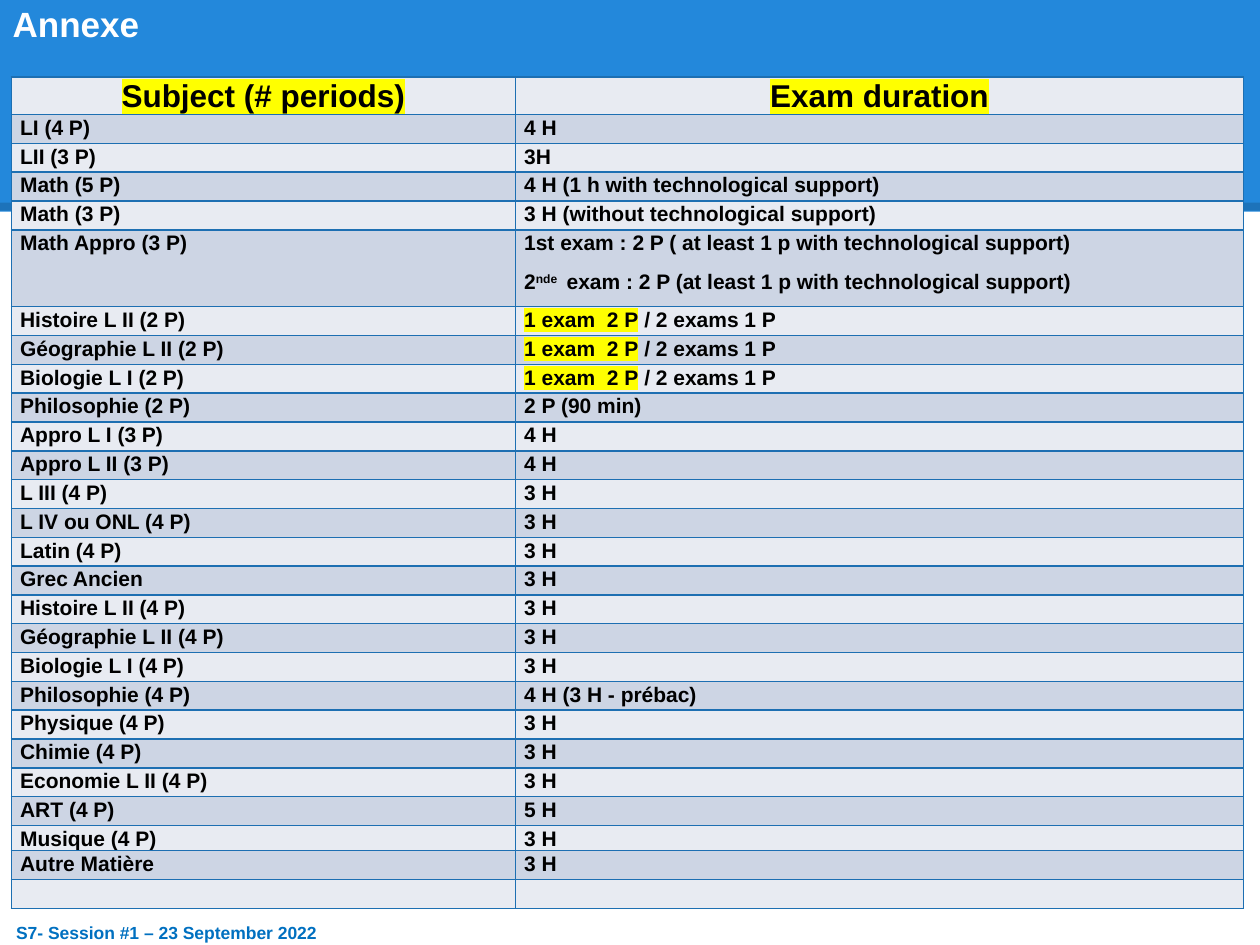
from lxml.etree import SubElement
from pptx import Presentation
from pptx.dml.color import RGBColor
from pptx.enum.shapes import MSO_CONNECTOR, MSO_SHAPE
from pptx.enum.text import MSO_ANCHOR, MSO_AUTO_SIZE, PP_ALIGN
from pptx.oxml.ns import qn
from pptx.util import Inches, Pt

COLORS = {
    "band": "2388DB", "shade": "000000", "title": "FFFFFF", "text": "000000",
    "border": "1D6FB2", "light": "E8EBF2", "dark": "CDD5E4",
    "marker": "FFFF00", "footer": "0070C0",
}

# A cell is a list of paragraphs, a paragraph a list of (text, style) runs.
MARK = {"marked": True}
APPRO_EXAMS = [
    [("1st exam : 2 P ( at least 1 p with technological support)", {})],
    [("2", {}), ("nde ", {"raised": True}),
     (" exam : 2 P (at least 1 p with technological support)", {})],
]
EXAM_CHOICE = [[("1 exam  2 P", MARK), (" / 2 exams 1 P", {})]]

EXAMS = [
    ("LI (4 P)", "4 H"),
    ("LII (3 P)", "3H"),
    ("Math (5 P)", "4 H (1 h with technological support)"),
    ("Math (3 P)", "3 H (without technological support)"),
    ("Math Appro (3 P)", APPRO_EXAMS),
    ("Histoire L II (2 P)", EXAM_CHOICE),
    ("Géographie L II (2 P)", EXAM_CHOICE),
    ("Biologie L I (2 P)", EXAM_CHOICE),
    ("Philosophie (2 P)", "2 P (90 min)"),
    ("Appro L I (3 P)", "4 H"),
    ("Appro L II (3 P)", "4 H"),
    ("L III (4 P)", "3 H"),
    ("L IV ou ONL (4 P)", "3 H"),
    ("Latin (4 P)", "3 H"),
    ("Grec Ancien", "3 H"),
    ("Histoire L II (4 P)", "3 H"),
    ("Géographie L II (4 P)", "3 H"),
    ("Biologie L I (4 P)", "3 H"),
    ("Philosophie (4 P)", "4 H (3 H - prébac)"),
    ("Physique (4 P)", "3 H"),
    ("Chimie (4 P)", "3 H"),
    ("Economie L II (4 P)", "3 H"),
    ("ART (4 P)", "5 H"),
    ("Musique (4 P)", "3 H"),
    ("Autre Matière", "3 H"),
    ("", ""),
]
HEADINGS = ("Subject (# periods)", "Exam duration")

# Header, two-exam row and the tight row have their own heights; the rest share.
TALL_ROW, TIGHT_ROW = 0.61, 0.2
PLAIN_ROW = (6.59 - 0.29 - TALL_ROW - TIGHT_ROW) / 24
SPECIAL_ROWS = {"Math Appro (3 P)": TALL_ROW, "Musique (4 P)": TIGHT_ROW}


class SlideBuilder:
    def __init__(self, slide, font="Arial"):
        self.slide = slide
        self.font = font

    def color(self, key):
        return RGBColor.from_string(COLORS[key])

    def run(self, paragraph, text, size, color, marked=False, raised=False):
        run = paragraph.add_run()
        run.text = text
        run.font.size = Pt(size)
        run.font.bold = True
        run.font.color.rgb = self.color(color)
        run.font.name = self.font
        properties = run._r.get_or_add_rPr()
        if raised:
            properties.set("baseline", "30000")
        if marked:
            highlight = SubElement(properties, qn("a:highlight"))
            SubElement(highlight, qn("a:srgbClr"), val=COLORS["marker"])
            properties.find(qn("a:solidFill")).addnext(highlight)

    def place(self, shape, left, top, width, height):
        shape.left, shape.top = Inches(left), Inches(top)
        shape.width, shape.height = Inches(width), Inches(height)

    def band(self, left, top, width, height):
        band = self.slide.shapes.add_shape(
            MSO_SHAPE.RECTANGLE, *map(Inches, (left, top, width, height)))
        band.shadow.inherit = False
        band.fill.solid()
        band.fill.fore_color.rgb = self.color("band")
        band.line.fill.background()

    def shade_line(self, y, width, weight, opacity):
        line = self.slide.shapes.add_connector(
            MSO_CONNECTOR.STRAIGHT, 0, Inches(y), Inches(width), Inches(y))
        line.line.width = Pt(weight)
        line.line.color.rgb = self.color("shade")
        properties = line.element.spPr
        tint = next(properties.iter(qn("a:srgbClr")))
        SubElement(tint, qn("a:alpha"), val=str(opacity * 1000))
        SubElement(properties, qn("a:effectLst"))

    def title(self, text, *box):
        title = self.slide.shapes.title
        title.element.getparent().append(title.element)  # in front of the band
        self.place(title, *box)
        frame = title.text_frame
        frame.auto_size = MSO_AUTO_SIZE.NONE
        frame.vertical_anchor = MSO_ANCHOR.BOTTOM
        frame.margin_left = frame.margin_right = Inches(0.1)
        frame.margin_top = frame.margin_bottom = Inches(0.1)
        frame.paragraphs[0].alignment = PP_ALIGN.LEFT
        self.run(frame.paragraphs[0], text, 20, "title")

    def footer(self, text, *box):
        footer = self.slide.shapes.add_textbox(*map(Inches, box))
        frame = footer.text_frame
        frame.word_wrap = True
        frame.auto_size = MSO_AUTO_SIZE.SHAPE_TO_FIT_TEXT
        self.run(frame.paragraphs[0], text, 10, "footer")

    def cell(self, cell, content, fill, size=12, align=PP_ALIGN.LEFT):
        cell.fill.solid()
        cell.fill.fore_color.rgb = self.color(fill)
        cell.margin_left = cell.margin_right = Inches(0.07)
        cell.margin_top = cell.margin_bottom = 0
        self.borders(cell)
        if isinstance(content, str):
            content = [[(content, {})]]
        for index, runs in enumerate(content):
            frame = cell.text_frame
            paragraph = frame.add_paragraph() if index else frame.paragraphs[0]
            paragraph.alignment = align
            paragraph.line_spacing = 1.07
            paragraph.space_after = Pt(8)
            for text, style in runs:
                if text:
                    self.run(paragraph, text, size, "text", **style)
                else:
                    SubElement(paragraph._p, qn("a:endParaRPr"), sz=str(size * 100))

    def borders(self, cell):
        properties = cell._tc.get_or_add_tcPr()
        for index, side in enumerate(("lnL", "lnR", "lnT", "lnB")):
            edge = SubElement(properties, qn(f"a:{side}"), w=str(Pt(1)))
            fill = SubElement(edge, qn("a:solidFill"))
            SubElement(fill, qn("a:srgbClr"), val=COLORS["border"])
            properties.insert(index, edge)

    def exam_table(self, left, top, widths):
        table = self.slide.shapes.add_table(
            len(EXAMS) + 1, len(widths), Inches(left), Inches(top),
            Inches(sum(widths)), Inches(6.6)).table
        table.first_row = table.horz_banding = False
        for column, width in zip(table.columns, widths):
            column.width = Inches(width)
        for index, contents in enumerate([HEADINGS, *EXAMS]):
            height = SPECIAL_ROWS.get(contents[0], PLAIN_ROW)
            table.rows[index].height = Inches(height)
            fill = "dark" if index % 2 else "light"
            for cell, content in zip(table.rows[index].cells, contents):
                if index == 0:
                    self.cell(cell, [[(content, MARK)]], fill, 18, PP_ALIGN.CENTER)
                else:
                    self.cell(cell, content, fill)


def main():
    deck = Presentation()
    deck.slide_width, deck.slide_height = Inches(10), Inches(7.5)
    annex = SlideBuilder(deck.slides.add_slide(deck.slide_layouts[5]))
    annex.band(0, 0, 10, 1.68)
    annex.shade_line(1.64, 10, 4.5, 15)
    annex.title("Annexe", 0, 0, 1.65, 0.45)
    annex.exam_table(0.09, 0.61, (4, 5.78))
    annex.footer("S7- Session #1 – 23 September 2022", 0.03, 7.27, 3.43, 0.27)
    deck.save("out.pptx")


if __name__ == "__main__":
    main()
